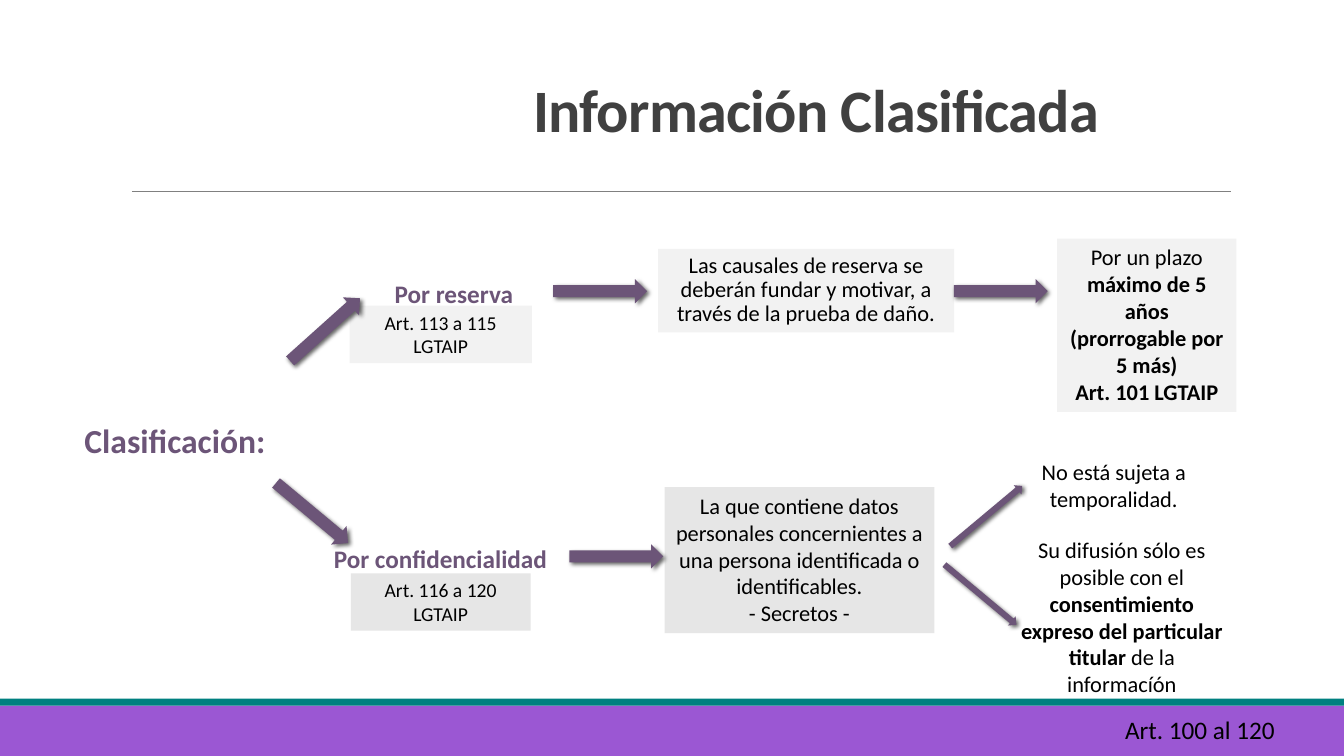
"""Build the slide on classified information."""
from dataclasses import dataclass

from lxml.etree import SubElement
from pptx import Presentation
from pptx.dml.color import RGBColor
from pptx.enum.shapes import MSO_CONNECTOR, MSO_SHAPE
from pptx.enum.text import MSO_ANCHOR, PP_ALIGN
from pptx.oxml.ns import qn
from pptx.shapes.autoshape import Shape
from pptx.slide import Slide
from pptx.util import Pt

BLACK = RGBColor(0x00, 0x00, 0x00)
DARK = RGBColor(0x40, 0x40, 0x40)
GREY = RGBColor(0x80, 0x80, 0x80)
PALE = RGBColor(0xF2, 0xF2, 0xF2)
SILVER = RGBColor(0xE6, 0xE6, 0xE6)
PLUM = RGBColor(0x6C, 0x55, 0x78)
PURPLE = RGBColor(0x9B, 0x57, 0xD3)
TEAL = RGBColor(0x00, 0x80, 0x80)

WIDE, HIGH = 960, 540
FONT = "Calibri"
ARROW = 67


@dataclass(frozen=True)
class Run:
    text: str
    bold: bool = False


@dataclass(frozen=True)
class Box:
    left: float
    top: float
    width: float
    height: float
    lines: tuple[tuple[Run, ...], ...] = ()
    size: float = 16
    fill: RGBColor | None = None
    ink: RGBColor = BLACK
    pitch: float = 1
    anchor: MSO_ANCHOR = MSO_ANCHOR.TOP
    track: int = 0


@dataclass(frozen=True)
class Arrow:
    left: float
    top: float
    height: float = 17.3
    turn: float = 0


def label(text: str, bold: bool = False) -> tuple[tuple[Run, ...], ...]:
    """Return one line that holds one run."""
    return ((Run(text, bold),),)


BOXES = (
    Box(0, 504, WIDE, 36, fill=PURPLE),
    Box(0, 499, WIDE, 5, fill=TEAL),
    Box(205.9, 46.1, 754.1, 61.2, label("Información Clasificada", True), 43,
        ink=DARK, pitch=0.85, anchor=MSO_ANCHOR.BOTTOM, track=-50),
    Box(781.2, 506.9, 151.9, 28.8, label("Art. 100 al 120"), 18),
    Box(13, 296.6, 223.9, 36.5, label("Clasificación:", True), 24, ink=PLUM),
    Box(257, 195.1, 134.6, 28.8, label("Por reserva", True), 18, ink=PLUM),
    Box(222.5, 384.5, 184.3, 28.8, label("Por confidencialidad", True), 18, ink=PLUM),
    Box(249.8, 218.4, 130.1, 41, label("Art. 113 a 115 LGTAIP"), 14, PALE),
    Box(250.6, 409.5, 128.4, 41, label("Art. 116 a 120 LGTAIP"), 14, SILVER),
    Box(470, 177.8, 211.5, 59.6,
        label("Las causales de reserva se deberán fundar y motivar, "
              "a través de la prueba de daño."), fill=PALE, pitch=0.9),
    Box(755.1, 170.4, 128.1, 123.8,
        ((Run("Por un plazo "), Run("máximo de 5 años (prorrogable por 5 más)", True)),
         (Run("Art. 101 LGTAIP", True),)), fill=PALE),
    Box(474.7, 347.9, 192.7, 104.4,
        ((Run("La que contiene datos personales concernientes a una persona "
              "identificada o identificables."),),
         (Run("- Secretos -"),)), fill=SILVER),
    Box(713.5, 324, 164.2, 46, label("No está sujeta a temporalidad.")),
    Box(719.2, 379.4, 164.2, 123.8,
        ((Run("Su difusión sólo es posible con el "),
          Run("consentimiento expreso del particular titular ", True),
          Run("de la informacíón")),)),
)

ARROWS = (
    Arrow(395.2, 199.4),
    Arrow(681.4, 199.4),
    Arrow(406.8, 388.8),
    Arrow(189.4, 357.8, turn=39.8),
    Arrow(198.7, 226.8, turn=318.1),
    Arrow(666.8, 420.5, 8.6, 39.9),
    Arrow(671, 364.3, 8.6, 320.1),
)


def paint(shape: Shape, fill: RGBColor) -> None:
    """Give a shape a flat fill with no line or shadow."""
    shape.shadow.inherit = False
    shape.fill.solid()
    shape.fill.fore_color.rgb = fill
    shape.line.fill.background()


def draw_box(slide: Slide, box: Box) -> None:
    """Draw a text box, or a rectangle when a fill is given."""
    frame = Pt(box.left), Pt(box.top), Pt(box.width), Pt(box.height)
    if box.fill is None:
        shape = slide.shapes.add_textbox(*frame)
    else:
        shape = slide.shapes.add_shape(MSO_SHAPE.RECTANGLE, *frame)
        paint(shape, box.fill)
    body = shape.text_frame
    body.word_wrap = True
    body.vertical_anchor = box.anchor
    for index, line in enumerate(box.lines):
        para = body.add_paragraph() if index else body.paragraphs[0]
        para.alignment = PP_ALIGN.CENTER
        para.line_spacing = box.pitch
        for part in line:
            run = para.add_run()
            run.text = part.text
            run.font.name = FONT
            run.font.size = Pt(box.size)
            run.font.bold = part.bold
            run.font.color.rgb = box.ink
            if box.track:
                run.font._element.set("spc", str(box.track))


def draw_arrow(slide: Slide, arrow: Arrow) -> None:
    """Draw a block arrow with a soft shadow."""
    shape = slide.shapes.add_shape(
        MSO_SHAPE.RIGHT_ARROW, Pt(arrow.left), Pt(arrow.top), Pt(ARROW), Pt(arrow.height))
    paint(shape, PLUM)
    shape.rotation = arrow.turn
    effects = shape._element.spPr.find(qn("a:effectLst"))
    shade = SubElement(effects, qn("a:outerShdw"), blurRad=str(Pt(3)),
                       dist=str(Pt(2)), dir="2700000", rotWithShape="0")
    tint = SubElement(shade, qn("a:srgbClr"), val=str(BLACK))
    SubElement(tint, qn("a:alpha"), val="60000")


def draw_rule(slide: Slide) -> None:
    """Draw the thin line under the title."""
    rule = slide.shapes.add_connector(
        MSO_CONNECTOR.STRAIGHT, Pt(94.3), Pt(136.8), Pt(879.1), Pt(136.8))
    rule.line.color.rgb = GREY
    rule.line.width = Pt(0.5)
    SubElement(rule._element.spPr, qn("a:effectLst"))


def main() -> None:
    """Build and save the deck."""
    deck = Presentation()
    deck.slide_width, deck.slide_height = Pt(WIDE), Pt(HIGH)
    slide = deck.slides.add_slide(deck.slide_layouts[6])
    draw_rule(slide)
    for box in BOXES:
        draw_box(slide, box)
    for arrow in ARROWS:
        draw_arrow(slide, arrow)
    deck.save("out.pptx")


if __name__ == "__main__":
    main()
